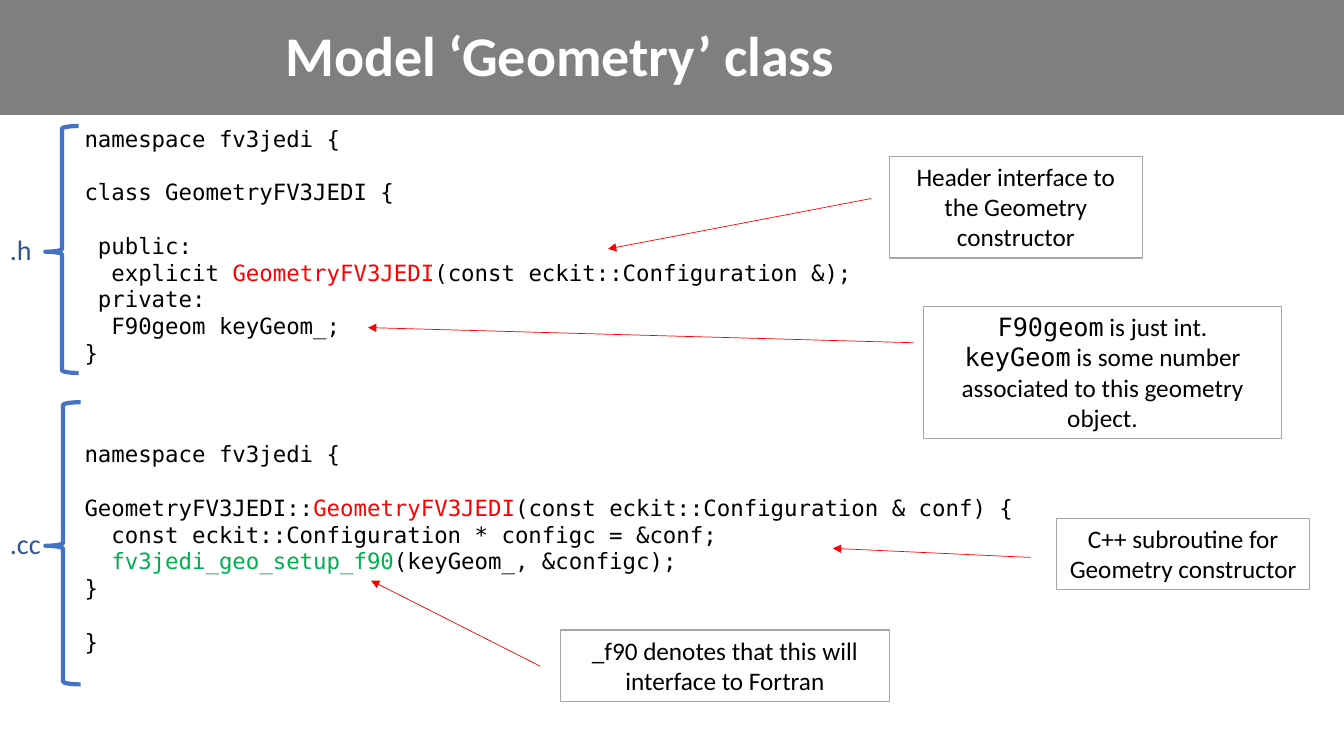
"""Build the slide that explains the model Geometry class."""
from lxml import etree
from pptx import Presentation
from pptx.dml.color import RGBColor
from pptx.enum.shapes import MSO_CONNECTOR as Connector, MSO_SHAPE as Shape
from pptx.enum.text import MSO_ANCHOR as Anchor, PP_ALIGN as Align
from pptx.oxml.ns import qn
from pptx.util import Inches, Pt

SANS, MONO = "Calibri", "DejaVu Sans Mono"
BLACK, RED, GREEN = "000000", "FF0000", "00B050"


def color(value):
    return RGBColor.from_string(value)


def style(font, name, size, value):
    font.name, font.size = name, Pt(size)
    font.color.rgb = color(value)


deck = Presentation()
deck.slide_width, deck.slide_height = Inches(13.33), Inches(7.5)
page = deck.slides.add_slide(deck.slide_layouts[5])

title = page.shapes.title
title.left, title.top = Inches(0.22), Inches(0.12)
title.width, title.height = Inches(10.66), Inches(0.91)
title.text_frame.text = "Model ‘Geometry’ class"
title.text_frame.vertical_anchor = Anchor.MIDDLE
para = title.text_frame.paragraphs[0]
para.alignment, para.line_spacing = Align.CENTER, 0.9
style(para.font, SANS, 40, "FFFFFF")
para.font.bold = True

band = page.shapes.add_shape(Shape.RECTANGLE, Inches(-0.03), Inches(-0.02), Inches(13.37), Inches(1.16))
band.shadow.inherit = False
band.fill.solid()
band.fill.fore_color.rgb = color(BLACK)
fill_color = band.fill._xPr.find(qn("a:solidFill"))[0]
etree.SubElement(fill_color, qn("a:alpha"), val="50000")
band.line.fill.background()
title.element.addprevious(band.element)

# Each code line: space before in points, then its (text, colour) runs
code_lines = [
    (0, [("namespace fv3jedi {", BLACK)]),
    (19, [("class GeometryFV3JEDI {", BLACK)]),
    (19, [(" public:", BLACK)]),
    (0, [("  explicit ", BLACK), ("GeometryFV3JEDI", RED), ("(const eckit::Configuration &);", BLACK)]),
    (0, [(" private:", BLACK)]),
    (0, [("  F90geom keyGeom_;", BLACK)]),
    (0, [("}", BLACK)]),
    (53, [("namespace fv3jedi {", BLACK)]),
    (19, [("GeometryFV3JEDI::", BLACK), ("GeometryFV3JEDI", RED), ("(const eckit::Configuration & conf) {", BLACK)]),
    (0, [("  const eckit::Configuration * configc = &conf;", BLACK)]),
    (0, [("  ", BLACK), ("fv3jedi_geo_setup_f90", GREEN), ("(keyGeom_, &configc);", BLACK)]),
    (0, [("}", BLACK)]),
    (19, [("}", BLACK)]),
]
code = page.shapes.add_textbox(Inches(0.74), Inches(1.19), Inches(11.26), Inches(5.42)).text_frame
code.word_wrap = True
for index, (gap, spans) in enumerate(code_lines):
    para = code.add_paragraph() if index else code.paragraphs[0]
    if gap:
        para.space_before = Pt(gap)
    for text, value in spans:
        span = para.add_run()
        span.text = text
        style(span.font, MONO, 16, value)

files = [
    (".h", (0.45, 1.25, 0.33, 2.45), (0, 2.26, 0.45, 0.46)),
    (".cc", (0.45, 3.99, 0.35, 2.8), (0, 5.17, 0.76, 0.44)),
]
for suffix, brace_place, label_place in files:
    group = page.shapes.add_group_shape()
    brace = group.shapes.add_shape(Shape.LEFT_BRACE, *map(Inches, brace_place))
    brace.adjustments[0], brace.adjustments[1] = 0.083, 0.509
    brace.shadow.inherit = False
    brace.fill.background()
    brace.line.color.rgb, brace.line.width = color("4472C4"), Pt(3)
    label = group.shapes.add_textbox(*map(Inches, label_place)).text_frame
    label.word_wrap = False
    label.text = suffix
    style(label.paragraphs[0].font, SANS, 20, "2F5597")

notes = [
    ((8.82, 1.55, 2.51, 1.01), (8.64, 1.97, 6.03, 2.47),
     [[("Header interface to the Geometry constructor", SANS)]]),
    ((9.16, 3.04, 3.55, 1.31), (9.06, 3.4, 3.65, 3.25),
     [[("F90geom", MONO), (" is just int.", SANS)],
      [("keyGeom", MONO), (" is some number associated to this geometry object.", SANS)]]),
    ((10.48, 5.14, 2.51, 0.71), (10.22, 5.53, 8.26, 5.44),
     [[("C++ subroutine for Geometry constructor", SANS)]]),
    ((5.56, 6.25, 3.26, 0.71), (5.36, 6.61, 3.68, 5.76),
     [[("_f90 denotes that this will interface to Fortran", SANS)]]),
]
for place, ends, paragraphs in notes:
    box = page.shapes.add_shape(Shape.RECTANGLE, *map(Inches, place))
    box.shadow.inherit = False
    box.fill.background()
    box.line.color.rgb, box.line.width = color("A6A6A6"), Pt(0.75)
    frame = box.text_frame
    frame.word_wrap, frame.vertical_anchor = True, Anchor.TOP
    for index, spans in enumerate(paragraphs):
        para = frame.add_paragraph() if index else frame.paragraphs[0]
        para.alignment = Align.CENTER
        for text, name in spans:
            span = para.add_run()
            span.text = text
            style(span.font, name, 18, BLACK)

    arrow = page.shapes.add_connector(Connector.STRAIGHT, *map(Inches, ends))
    arrow.line.color.rgb, arrow.line.width = color(RED), Pt(0.5)
    etree.SubElement(arrow.line._get_or_add_ln(), qn("a:tailEnd"), type="triangle")
    etree.SubElement(arrow.element.spPr, qn("a:effectLst"))

deck.save("out.pptx")
